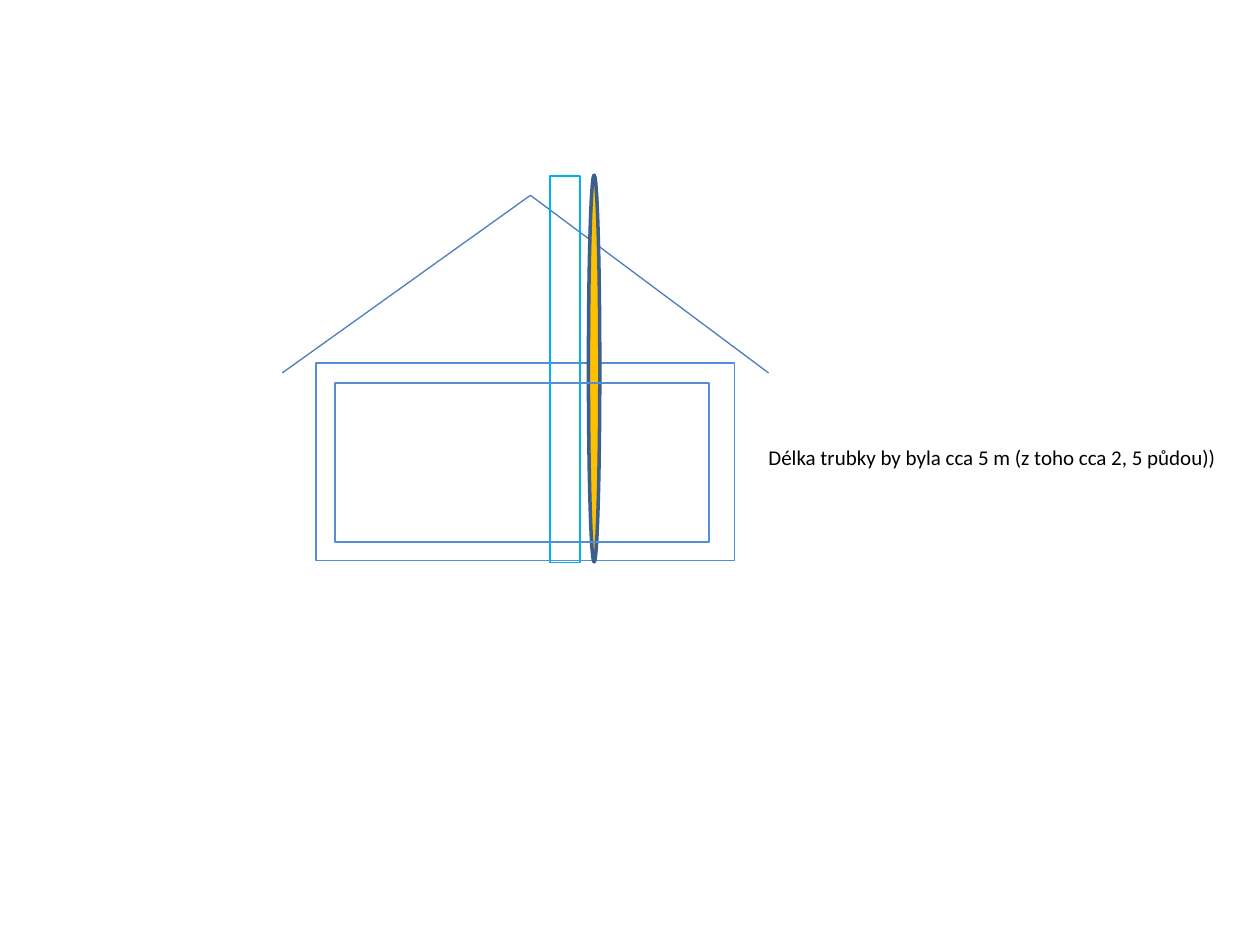
from pptx import Presentation
from pptx.dml.color import RGBColor
from pptx.enum.shapes import MSO_CONNECTOR, MSO_SHAPE
from pptx.enum.text import MSO_AUTO_SIZE
from pptx.util import Inches, Pt
from lxml import etree

RECTANGLE, OVAL = MSO_SHAPE.RECTANGLE, MSO_SHAPE.OVAL
STRAIGHT = MSO_CONNECTOR.STRAIGHT
FIT_SHAPE = MSO_AUTO_SIZE.SHAPE_TO_FIT_TEXT
DRAWING_NS = "http://schemas.openxmlformats.org/drawingml/2006/main"

WIDTH, HEIGHT = Inches(10), Inches(7.5)
COLUMNS, ROWS = 100, 75

THEME = {
    "font": "Calibri",
    "note_size": 12,
    "text": "000000",
    "wall": ("558ED5", 1),
    "roof": ("4B7EBC", 0.75),
    "chimney": ("00B0F0", 1),
    "pipe": ("3A5F8C", 2),
    "pipe_fill": "FFC000",
}

NOTE = "Délka trubky by byla cca 5 m (z toho cca 2, 5 půdou))"
NOTE_BOX = (60, 34.8, 37.9, 3)
OUTER_WALL = (25.1, 28.8, 33.2, 15.7)
INNER_WALL = (26.6, 30.4, 29.7, 12.6)
CHIMNEY = (29.5, 28.1, 30.7, 2.4)
PIPE = (46.7, 13.9, 0.9, 30.7)
ROOF = [(22.4, 29.6), (42.1, 15.5), (61, 29.6)]


def place(*lengths):
    units = (WIDTH / COLUMNS, HEIGHT / ROWS)
    return [round(length * units[i % 2]) for i, length in enumerate(lengths)]


def set_line(line, style):
    color, weight = THEME[style]
    line.color.rgb = RGBColor.from_string(color)
    line.width = Pt(weight)


def add_part(slide, kind, box, style, fill=None, rotation=0):
    part = slide.shapes.add_shape(kind, *place(*box))
    part.shadow.inherit = False
    part.rotation = rotation
    set_line(part.line, style)
    if fill:
        part.fill.solid()
        part.fill.fore_color.rgb = RGBColor.from_string(THEME[fill])
    else:
        part.fill.background()


def add_slope(slide, start, end):
    slope = slide.shapes.add_connector(STRAIGHT, *place(*start, *end))
    set_line(slope.line, "roof")
    etree.SubElement(slope._element.spPr, f"{{{DRAWING_NS}}}effectLst")


def add_text(slide, text, *, box, size, color, wrap=False):
    note = slide.shapes.add_textbox(*place(*box))
    frame = note.text_frame
    frame.word_wrap = wrap
    frame.auto_size = FIT_SHAPE
    run = frame.paragraphs[0].add_run()
    run.text = text
    run.font.name = THEME["font"]
    run.font.size = Pt(THEME[size])
    run.font.color.rgb = RGBColor.from_string(THEME[color])


def main():
    deck = Presentation()
    deck.slide_width, deck.slide_height = WIDTH, HEIGHT
    slide = deck.slides.add_slide(deck.slide_layouts[6])
    add_part(slide, RECTANGLE, OUTER_WALL, "wall")
    for start, end in zip(ROOF, ROOF[1:]):
        add_slope(slide, start, end)
    add_part(slide, RECTANGLE, CHIMNEY, "chimney", rotation=90)
    add_part(slide, OVAL, PIPE, "pipe", fill="pipe_fill")
    add_text(slide, NOTE, box=NOTE_BOX, size="note_size", color="text")
    add_part(slide, RECTANGLE, INNER_WALL, "wall")
    deck.save("out.pptx")


if __name__ == "__main__":
    main()
